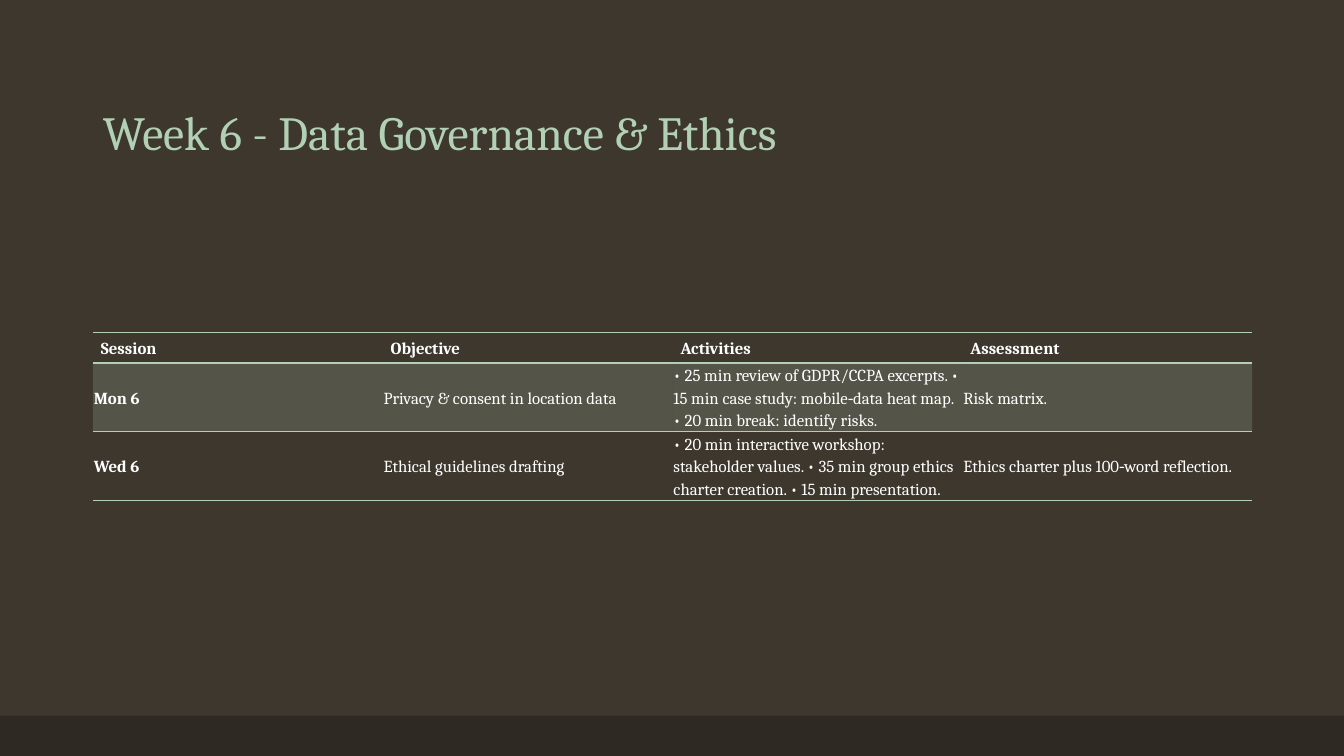
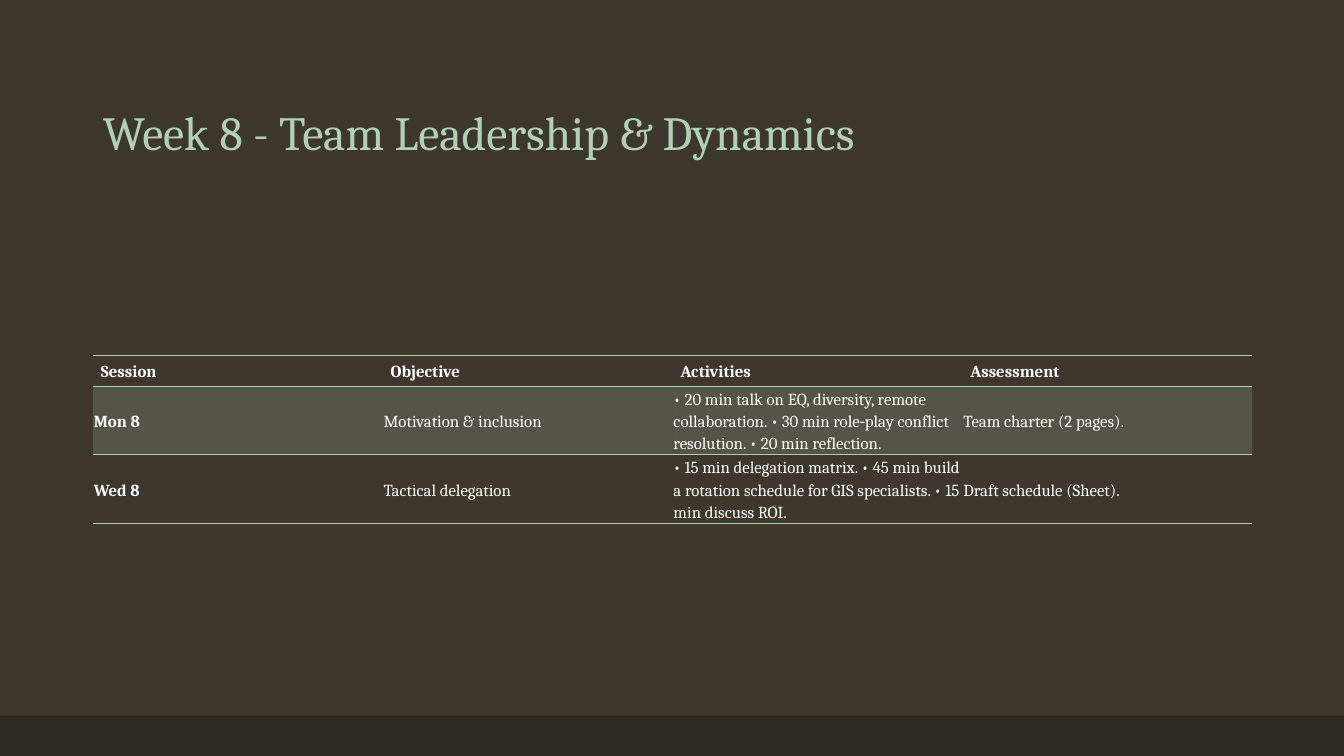
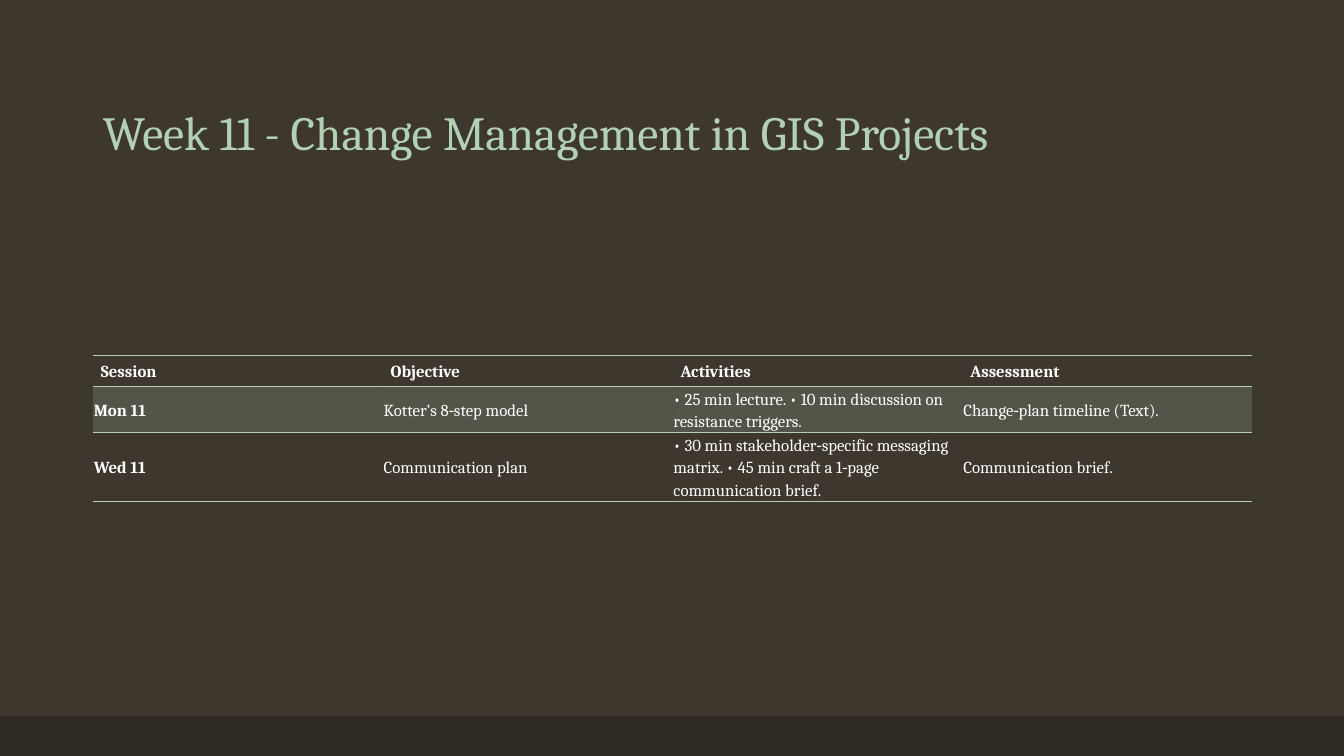
import pptx
import pptx.util
import pptx.dml.color
import pptx.enum.shapes
import pptx.enum.text
import pptx.oxml
from pptx.util import Inches

# Content: title, table top, sessions (cells, lines of text in the row)
HEADERS = ["Session", "Objective", "Activities", "Assessment"]
WEEKS = [
    ("Week 6 - Data Governance & Ethics", 3.3, [
        (["Mon 6", "Privacy & consent in location data",
          "• 25 min review of GDPR/CCPA excerpts. • 15 min case study: mobile‑data heat map. "
          "• 20 min break: identify risks.",
          "Risk matrix."], 3),
        (["Wed 6", "Ethical guidelines drafting",
          "• 20 min interactive workshop: stakeholder values. • 35 min group ethics charter creation. "
          "• 15 min presentation.",
          "Ethics charter plus 100‑word reflection."], 3),
    ]),
    ("Week 8 - Team Leadership & Dynamics", 3.53, [
        (["Mon 8", "Motivation & inclusion",
          "• 20 min talk on EQ, diversity, remote collaboration. • 30 min role‑play conflict resolution. "
          "• 20 min reflection.",
          "Team charter (2 pages)."], 3),
        (["Wed 8", "Tactical delegation",
          "• 15 min delegation matrix. • 45 min build a rotation schedule for GIS specialists. "
          "• 15 min discuss ROI.",
          "Draft schedule (Sheet)."], 3),
    ]),
    ("Week 11 - Change Management in GIS Projects", 3.53, [
        (["Mon 11", "Kotter’s 8‑step model",
          "• 25 min lecture. • 10 min discussion on resistance triggers.",
          "Change‑plan timeline (Text)."], 2),
        (["Wed 11", "Communication plan",
          "• 30 min stakeholder‑specific messaging matrix. • 45 min craft a 1‑page communication brief.",
          "Communication brief."], 3),
    ]),
]

# Shared style
COLORS = {"bg": "3D372E", "band": "2E2923", "accent": "B2D0B4", "text": "FFFFFF"}
FONT = "Cambria"
SLIDE_W, SLIDE_H, BAND_H = 13.33, 7.5, 0.4
LEFT, WIDTH = 0.92, 11.5
HEADER_H, LINE_H, ROW_PAD = 0.3, 0.22, 0.02
NO_GRID_STYLE = "{2D5ABB26-0587-4C30-8999-92F81FD0307C}"


def rgb(name):
    return pptx.dml.color.RGBColor.from_string(COLORS[name])


def write(tf, text, size=12, color="text", bold=False, spacing=1.15, after=8):
    p = tf.paragraphs[0]
    p.alignment = pptx.enum.text.PP_ALIGN.LEFT
    p.line_spacing = spacing
    p.space_before, p.space_after = pptx.util.Pt(0), pptx.util.Pt(after)
    r = p.add_run()
    r.text = text
    r.font.name, r.font.size, r.font.bold = FONT, pptx.util.Pt(size), bold
    r.font.color.rgb = rgb(color)


def child_xml(tag, attrs, inner=""):
    ns = 'xmlns:a="http://schemas.openxmlformats.org/drawingml/2006/main"'
    return pptx.oxml.parse_xml(f"<a:{tag} {ns} {attrs}>{inner}</a:{tag}>")


def add_borders(cell, sides):
    color = COLORS["accent"]
    inner = f'<a:solidFill><a:srgbClr val="{color}"/></a:solidFill>'
    tcPr = cell._tc.get_or_add_tcPr()
    for i, side in enumerate(sides):
        tcPr.insert(i, child_xml("ln" + side, 'w="12700"', inner))


def fill_cell(cell, tinted):
    if not tinted:
        cell.fill.background()
        return
    cell.fill.solid()
    cell.fill.fore_color.rgb = rgb("accent")
    clr = cell._tc.tcPr.find(".//{*}srgbClr")
    clr.append(child_xml("alpha", 'val="20000"'))


def add_sessions(s, top, sessions):
    rows = [(HEADERS, None)] + sessions
    heights = [HEADER_H] + [n * LINE_H + ROW_PAD for _, n in sessions]
    frame = s.shapes.add_table(len(rows), len(HEADERS), Inches(LEFT), Inches(top),
                               Inches(WIDTH), Inches(sum(heights)))
    table = frame.table
    table._tbl.tblPr.find("{*}tableStyleId").text = NO_GRID_STYLE
    for i, (texts, _) in enumerate(rows):
        table.rows[i].height = Inches(heights[i])
        header = i == 0
        pad_x, pad_y = (0.08, 0.04) if header else (0.01, 0.01)
        sides = "TB" if header else "T" if i == 1 else "B"
        for j, text in enumerate(texts):
            cell = table.cell(i, j)
            cell.margin_left = cell.margin_right = Inches(pad_x)
            cell.margin_top = cell.margin_bottom = Inches(pad_y)
            cell.vertical_anchor = pptx.enum.text.MSO_ANCHOR.MIDDLE
            write(cell.text_frame, text, bold=header or j == 0)
            fill_cell(cell, tinted=i == 1)
            add_borders(cell, sides)


def add_week(prs, title, top, sessions):
    s = prs.slides.add_slide(prs.slide_layouts[5])
    # Bottom band
    band = s.shapes.add_shape(pptx.enum.shapes.MSO_SHAPE.RECTANGLE, 0, Inches(SLIDE_H - BAND_H),
                              Inches(SLIDE_W), Inches(BAND_H))
    band.shadow.inherit = False
    band.fill.solid()
    band.fill.fore_color.rgb = rgb("band")
    band.line.fill.background()
    # Title
    sp = s.shapes.title
    sp.left, sp.top, sp.width, sp.height = (Inches(v) for v in (LEFT, 0.4, WIDTH, 1.25))
    tf = sp.text_frame
    tf.word_wrap = True
    tf.auto_size = pptx.enum.text.MSO_AUTO_SIZE.NONE
    tf.vertical_anchor = pptx.enum.text.MSO_ANCHOR.BOTTOM
    write(tf, title, size=34, color="accent", spacing=0.9, after=0)
    # Session table
    add_sessions(s, top, sessions)


def main():
    prs = pptx.Presentation()
    prs.slide_width, prs.slide_height = Inches(SLIDE_W), Inches(SLIDE_H)
    background = prs.slide_master.background.fill
    background.solid()
    background.fore_color.rgb = rgb("bg")
    for week in WEEKS:
        add_week(prs, *week)
    prs.save("out.pptx")


if __name__ == "__main__":
    main()
